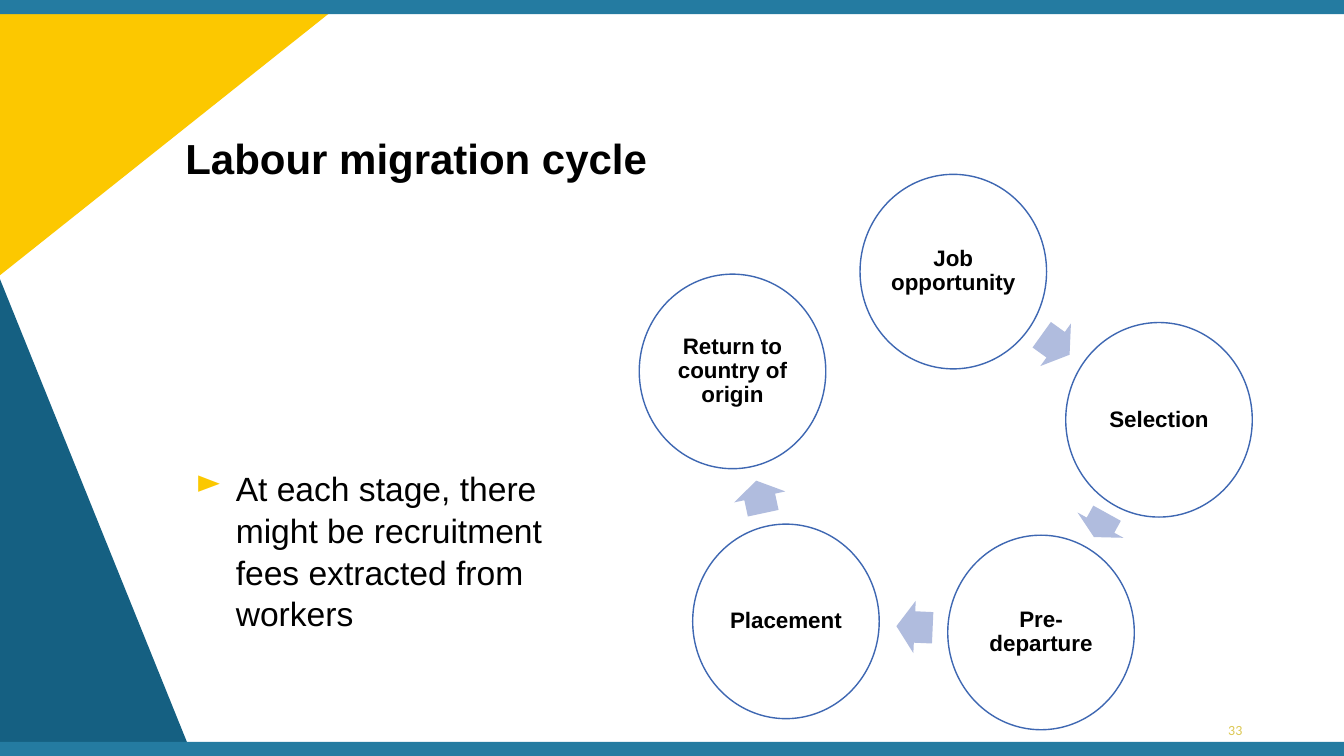
from dataclasses import dataclass, field

from lxml.etree import SubElement
from pptx import Presentation
from pptx.dml.color import RGBColor
from pptx.enum.shapes import MSO_SHAPE
from pptx.enum.text import MSO_ANCHOR, PP_ALIGN
from pptx.oxml.ns import qn
from pptx.util import Inches, Pt

YELLOW, TEAL, BAR = "FCC800", "156082", "247BA1"
WHITE, BLACK, OUTLINE, ARROW = "FFFFFF", "000000", "3E67B2", "B0BCDE"
BULLET, NUMBER = "FBC800", "DCC853"
PAGE_WIDTH, PAGE_HEIGHT, BAR_HEIGHT = 13.33, 7.5, 0.14
CIRCLE_WIDTH, CIRCLE_HEIGHT = 1.85, 1.93


@dataclass
class Stage:
    label: str
    left: float
    top: float


@dataclass
class Arrow:
    left: float
    top: float
    width: float
    angle: float
    height: float = 0.52


@dataclass
class Label:
    text: str
    left: float
    top: float
    width: float
    height: float
    font: dict
    layout: dict = field(default_factory=dict)
    bullet: bool = False


@dataclass
class Wedge:
    points: list[tuple[float, float]]
    color: str


WEDGES = [
    Wedge([(0, 0.04), (3.28, 0.12), (0, 2.73)], YELLOW),
    Wedge([(0, 2.77), (1.91, PAGE_HEIGHT), (0, PAGE_HEIGHT)], TEAL),
]
STAGES = [
    Stage("Job opportunity", 8.53, 1.73),
    Stage("Selection", 10.57, 3.2),
    Stage("Pre-departure", 9.4, 5.31),
    Stage("Placement", 6.87, 5.2),
    Stage("Return to country of origin", 6.34, 2.72),
]
ARROWS = [
    Arrow(10.3, 3.16, 0.34, 35.7),
    Arrow(10.78, 4.95, 0.27, 118.9),
    Arrow(8.89, 5.96, 0.36, 182.6),
    Arrow(7.37, 4.67, 0.33, 257.9),
]
LABELS = [
    Label("Labour migration cycle", 1.74, 1.27, 9.11, 0.65,
          {"name": "Arial", "size": Pt(30), "bold": True, "color": BLACK},
          {"line_spacing": 0.9}),
    Label("At each stage, there might be recruitment fees extracted from workers",
          1.84, 4.28, 4.33, 2.35,
          {"name": "Arial", "size": Pt(24), "color": BLACK},
          {"line_spacing": 1.04}, bullet=True),
    Label("33", 10.98, 7.13, 1.44, 0.22,
          {"name": "Calibri", "size": Pt(10), "color": NUMBER},
          {"alignment": PP_ALIGN.RIGHT}),
]
STAGE_FONT = {"name": "Arial", "size": Pt(16), "bold": True, "color": BLACK}
STAGE_LAYOUT = {"alignment": PP_ALIGN.CENTER, "line_spacing": 0.9}
STAGE_MARGINS = {
    "margin_left": Inches(0.02), "margin_right": Inches(0.02),
    "margin_top": Inches(0.02), "margin_bottom": Inches(0.02),
}


def rgb(color: str) -> RGBColor:
    return RGBColor.from_string(color)


def paint(shape, fill: str, line: str | None = None) -> None:
    shape.shadow.inherit = False
    shape.fill.solid()
    shape.fill.fore_color.rgb = rgb(fill)
    if line:
        shape.line.color.rgb = rgb(line)
        shape.line.width = Pt(1)
    else:
        shape.line.fill.background()


def add_bullet(para) -> None:
    properties = para._p.get_or_add_pPr()
    properties.set("marL", str(Inches(0.4)))
    properties.set("indent", str(Inches(-0.4)))
    color = SubElement(properties, qn("a:buClr"))
    SubElement(color, qn("a:srgbClr"), val=BULLET)
    SubElement(properties, qn("a:buChar"), char="►")


def write(shape, text: str, font: dict, layout: dict, bullet: bool = False) -> None:
    frame = shape.text_frame
    frame.word_wrap = True
    frame.vertical_anchor = MSO_ANCHOR.MIDDLE
    para = frame.paragraphs[0]
    if bullet:
        add_bullet(para)
    for name, value in layout.items():
        setattr(para, name, value)
    span = para.add_run()
    span.text = text
    for name, value in font.items():
        if name == "color":
            span.font.color.rgb = rgb(value)
        else:
            setattr(span.font, name, value)


def add_wedge(page, wedge: Wedge) -> None:
    first, *others = [(Inches(x), Inches(y)) for x, y in wedge.points]
    builder = page.shapes.build_freeform(*first)
    builder.add_line_segments(others, close=True)
    paint(builder.convert_to_shape(), wedge.color)


def add_bar(page, top: float) -> None:
    bar = page.shapes.add_shape(MSO_SHAPE.RECTANGLE, 0, Inches(top),
                                Inches(PAGE_WIDTH), Inches(BAR_HEIGHT))
    paint(bar, BAR)


def add_label(page, label: Label) -> None:
    box = page.shapes.add_textbox(Inches(label.left), Inches(label.top),
                                  Inches(label.width), Inches(label.height))
    write(box, label.text, label.font, label.layout, label.bullet)


def add_stage(page, stage: Stage) -> None:
    circle = page.shapes.add_shape(MSO_SHAPE.OVAL, Inches(stage.left), Inches(stage.top),
                                   Inches(CIRCLE_WIDTH), Inches(CIRCLE_HEIGHT))
    paint(circle, WHITE, OUTLINE)
    for name, value in STAGE_MARGINS.items():
        setattr(circle.text_frame, name, value)
    write(circle, stage.label, STAGE_FONT, STAGE_LAYOUT)


def add_arrow(page, arrow: Arrow) -> None:
    shape = page.shapes.add_shape(MSO_SHAPE.RIGHT_ARROW, Inches(arrow.left), Inches(arrow.top),
                                  Inches(arrow.width), Inches(arrow.height))
    shape.adjustments[0] = 0.6
    shape.adjustments[1] = 0.5
    shape.rotation = arrow.angle
    paint(shape, ARROW)


def main() -> None:
    deck = Presentation()
    deck.slide_width, deck.slide_height = Inches(PAGE_WIDTH), Inches(PAGE_HEIGHT)
    page = deck.slides.add_slide(deck.slide_layouts[6])

    # Corner wedges and edge bars
    for wedge in WEDGES:
        add_wedge(page, wedge)
    for top in (0, PAGE_HEIGHT - BAR_HEIGHT):
        add_bar(page, top)

    # Title, remark and page number
    for label in LABELS:
        add_label(page, label)

    # Migration cycle
    for stage in STAGES:
        add_stage(page, stage)
    for arrow in ARROWS:
        add_arrow(page, arrow)

    deck.save("out.pptx")


if __name__ == "__main__":
    main()
